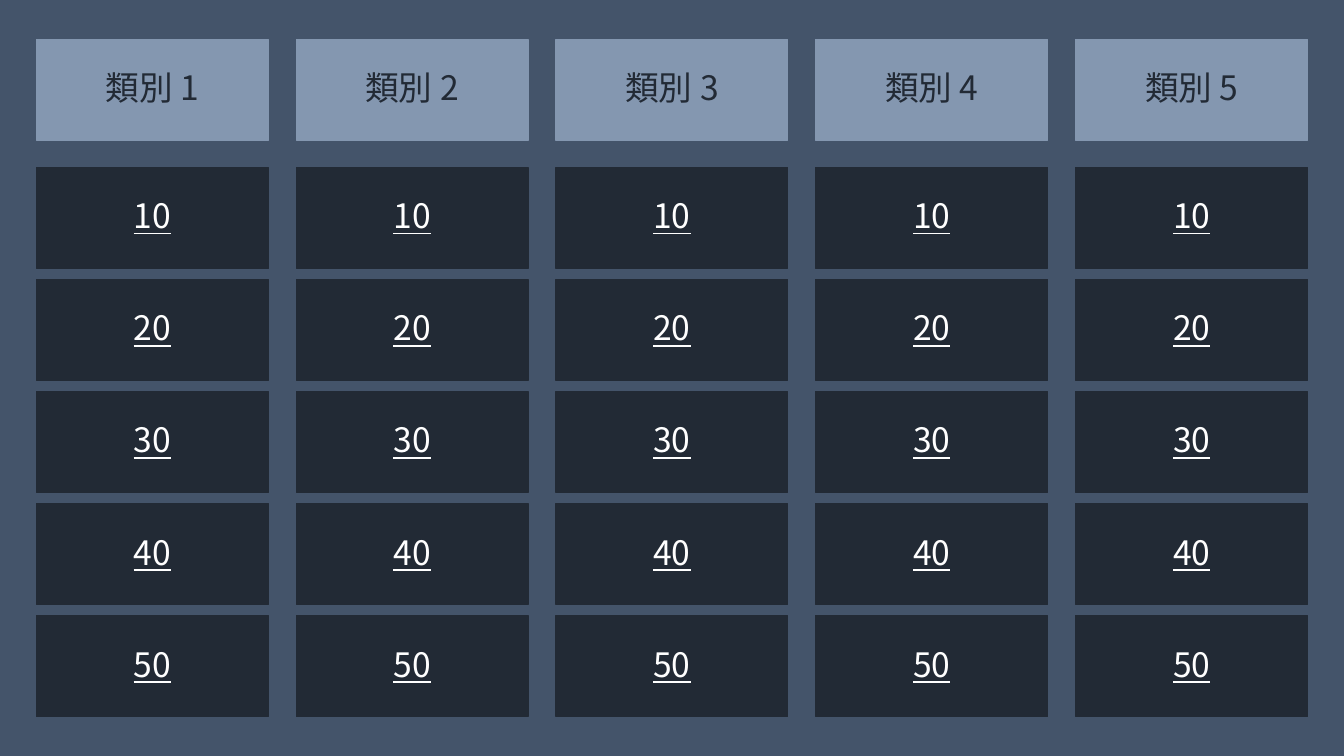
import pptx
import pptx.dml.color
import pptx.enum.shapes
import pptx.enum.text
import pptx.oxml
import pptx.oxml.ns
import pptx.util

RGB = pptx.dml.color.RGBColor
SLATE = RGB(0x44, 0x54, 0x6A)
STEEL = RGB(0x84, 0x97, 0xB0)
NIGHT = RGB(0x22, 0x2A, 0x35)
WHITE = RGB(0xFF, 0xFF, 0xFF)

WIDE, HIGH = 13.33, 7.5
COLS = 5
POINTS = (10, 20, 30, 40, 50)
SIDE, EDGE = 0.36, 0.39
TILE_W, TILE_H = 2.3, 1
FIRST = 1.66  # top of the first row of points
COL_STEP = (WIDE - 2 * SIDE - TILE_W) / (COLS - 1)
ROW_STEP = (HIGH - EDGE - TILE_H - FIRST) / (len(POINTS) - 1)


class Board:
    font = "Noto Sans CJK TC"
    size = pptx.util.Pt(24)

    def __init__(self, deck):
        self.slide = deck.slides.add_slide(deck.slide_layouts[6])
        back = self.slide.background.fill
        back.solid()
        back.fore_color.rgb = SLATE

    def tile(self, col, top, text, fill, ink, under=False):
        box = self.slide.shapes.add_shape(
            pptx.enum.shapes.MSO_SHAPE.RECTANGLE,
            *map(pptx.util.Inches, (SIDE + col * COL_STEP, top, TILE_W, TILE_H)))
        box.shadow.inherit = False
        box.fill.solid()
        box.fill.fore_color.rgb = fill
        box.line.color.rgb = fill
        box.line.width = pptx.util.Pt(0.75)
        box.text_frame.vertical_anchor = pptx.enum.text.MSO_ANCHOR.MIDDLE
        self.label(box.text_frame.paragraphs[0], text, ink, under)

    def label(self, para, text, ink, under):
        para.text = text
        para.alignment = pptx.enum.text.PP_ALIGN.CENTER
        para.line_spacing = 0.9
        para.font.name = self.font
        para.font.size = self.size
        para.font.color.rgb = ink
        para.font.underline = under
        # Chinese characters take their font from a:ea
        style = para._p.find(".//" + pptx.oxml.ns.qn("a:defRPr"))
        east = pptx.oxml.parse_xml(
            f'<a:ea {pptx.oxml.ns.nsdecls("a")} typeface="{self.font}"/>')
        style.find(pptx.oxml.ns.qn("a:latin")).addnext(east)

    def column(self, col):
        """Add a category heading and its point tiles."""
        self.tile(col, EDGE, f"類別 {col + 1}", STEEL, NIGHT)
        for row, score in enumerate(POINTS):
            self.tile(col, FIRST + row * ROW_STEP, str(score), NIGHT, WHITE, True)


def main():
    deck = pptx.Presentation()
    deck.slide_width = pptx.util.Inches(WIDE)
    deck.slide_height = pptx.util.Inches(HIGH)
    board = Board(deck)
    for col in range(COLS):
        board.column(col)
    deck.save("out.pptx")


if __name__ == "__main__":
    main()
